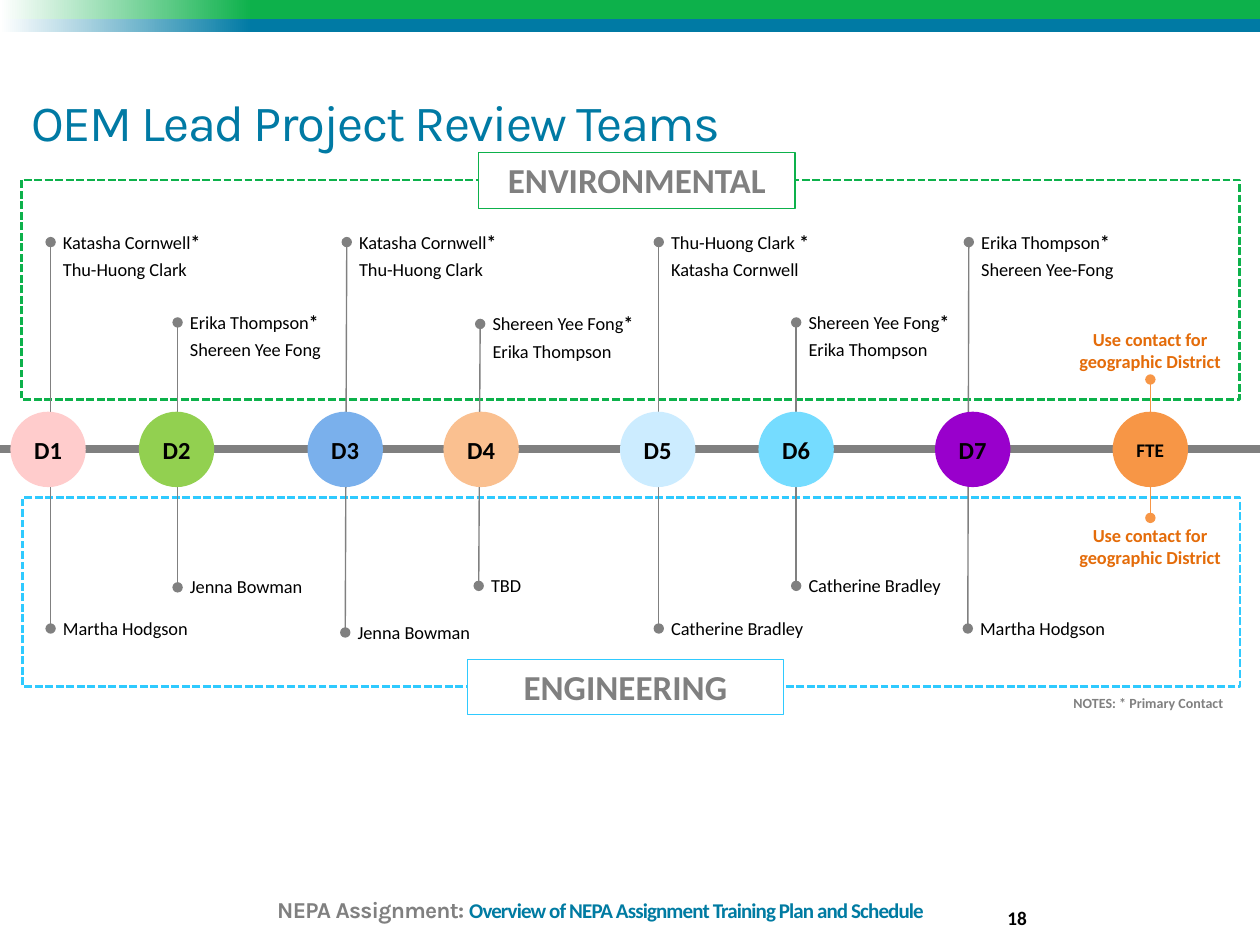
import pptx
import pptx.util
import pptx.dml.color
import pptx.enum.dml
import pptx.enum.shapes
import pptx.enum.text
import pptx.oxml.xmlchemy

Cm = pptx.util.Cm
Pt = pptx.util.Pt
SHAPE = pptx.enum.shapes.MSO_SHAPE
ALIGN = pptx.enum.text.PP_ALIGN
ANCHOR = pptx.enum.text.MSO_ANCHOR

COLORS = {
    "white": "FFFFFF", "black": "000000", "gray": "808080",
    "green": "0DB14B", "blue": "007AA4", "footer": "007BA2", "sky": "2FCAFF",
    "orange": "F79646", "contact": "E46C0A",
    "D1": "FFCCCC", "D2": "92D050", "D3": "7AB0EC", "D4": "FAC090",
    "D5": "CCECFF", "D6": "75DCFF", "D7": "9900CC", "FTE": "F79646",
}

DISTRICTS = [
    ("D1", 0.97, 1.02, 4.88, 1.02, 12.67, "Katasha Cornwell", "Thu-Huong Clark", "Martha Hodgson"),
    ("D2", 3.56, 3.58, 6.5, 3.58, 11.84, "Erika Thompson", "Shereen Yee Fong", "Jenna Bowman"),
    ("D3", 6.96, 6.99, 4.88, 6.96, 12.75, "Katasha Cornwell", "Thu-Huong Clark", "Jenna Bowman"),
    ("D4", 9.7, 9.68, 6.53, 9.65, 11.81, "Shereen Yee Fong", "Erika Thompson", "TBD"),
    ("D5", 13.26, 13.28, 4.88, 13.28, 12.67, "Thu-Huong Clark ", "Katasha Cornwell", "Catherine Bradley"),
    ("D6", 16.05, 16.05, 6.5, 16.05, 11.81, "Shereen Yee Fong", "Erika Thompson", "Catherine Bradley"),
    ("D7", 19.61, 19.53, 4.88, 19.51, 12.67, "Erika Thompson", "Shereen Yee-Fong", "Martha Hodgson"),
]


def rgb(name):
    """Return the named colour."""
    return pptx.dml.color.RGBColor.from_string(COLORS[name])


def add_text(p, text, size=10.5, color="black", bold=False, font="Calibri",
             align=None, after=0, line=None, track=0):
    """Append a formatted run to a paragraph."""
    p.alignment = align
    p.space_after = Pt(after)
    p.line_spacing = line
    r = p.add_run()
    r.text = text
    r.font.name, r.font.size, r.font.bold = font, Pt(size), bold
    r.font.color.rgb = rgb(color)
    if track:
        r._r.get_or_add_rPr().set("spc", str(round(track * 100)))


def add_box(s, x, y, w, h, anchor=ANCHOR.TOP, inset=True):
    """Add a wrapping text box and return its text frame."""
    tf = s.shapes.add_textbox(Cm(x), Cm(y), Cm(w), Cm(h)).text_frame
    tf.word_wrap = True
    tf.vertical_anchor = anchor
    if not inset:
        tf.margin_left = tf.margin_right = tf.margin_top = tf.margin_bottom = 0
    return tf


def add_shape(s, kind, x, y, w, h, fill=None, line=None, width=0.75):
    """Add a flat shape with optional fill and outline."""
    sp = s.shapes.add_shape(kind, Cm(x), Cm(y), Cm(w), Cm(h))
    sp.shadow.inherit = False
    if fill:
        sp.fill.solid()
        sp.fill.fore_color.rgb = rgb(fill)
    else:
        sp.fill.background()
    if line:
        sp.line.color.rgb = rgb(line)
        sp.line.width = Pt(width)
    else:
        sp.line.fill.background()
    return sp


def add_line(s, x1, y1, x2, y2, color="gray", width=0.79, dots=True):
    """Add a straight line, with round ends if dots is set."""
    c = s.shapes.add_connector(pptx.enum.shapes.MSO_CONNECTOR.STRAIGHT,
                               Cm(x1), Cm(y1), Cm(x2), Cm(y2))
    c.line.color.rgb = rgb(color)
    c.line.width = Pt(width)
    if dots:
        ln = c.line._get_or_add_ln()
        for tag in ("a:headEnd", "a:tailEnd"):
            end = pptx.oxml.xmlchemy.OxmlElement(tag)
            end.set("type", "oval")
            ln.append(end)
    c._element.spPr.append(pptx.oxml.xmlchemy.OxmlElement("a:effectLst"))


def add_banner(s, x, y, w):
    """Draw the two fading stripes."""
    for color, top, h in (("green", 0, 0.39), ("blue", 0.39, 0.25)):
        sp = add_shape(s, SHAPE.RECTANGLE, x, y + top, w, h)
        sp.fill.gradient()
        sp.fill.gradient_angle = 0
        for stop, name, position in zip(sp.fill.gradient_stops, ("white", color), (0, 0.2)):
            stop.color.rgb = rgb(name)
            stop.position = position


def add_section(s, x, y, w, h, title, color, tag_x, edge):
    """Draw a dashed frame with a title tag centred on one edge."""
    frame = add_shape(s, SHAPE.RECTANGLE, x, y, w, h, line=color, width=1.5)
    frame.line.dash_style = pptx.enum.dml.MSO_LINE.SQUARE_DOT
    tag = add_shape(s, SHAPE.RECTANGLE, x + tag_x, y + edge - 0.55, 6.38, 1.12, "white", color)
    tag.text_frame.vertical_anchor = ANCHOR.TOP
    add_text(tag.text_frame.paragraphs[0], title, size=20, color="gray", bold=True, align=ALIGN.CENTER)


def add_circle(s, cx, cy, name, size=14):
    """Draw a named circle on the timeline."""
    d = 1.52
    sp = add_shape(s, SHAPE.OVAL, cx - d / 2, cy - d / 2, d, d, name)
    tf = sp.text_frame
    tf.word_wrap = False
    tf.vertical_anchor = ANCHOR.MIDDLE
    add_text(tf.paragraphs[0], name, size=size, bold=True, align=ALIGN.CENTER)


def add_district(s, cy, name, cx, x1, y1, x2, y2, primary, second, engineer):
    """Draw a district with its reviewers above and engineer below."""
    add_line(s, x2, y2, x1, y1)
    add_circle(s, cx, cy, name)
    tf = add_box(s, x1, y1 - 0.37, 3.81, 1.27)
    p = tf.paragraphs[0]
    add_text(p, primary, after=3)
    add_text(p, "*", size=11, bold=True, after=3)
    add_text(tf.add_paragraph(), second, after=3)
    tf = add_box(s, x2, y2 - 0.36, 3.81, 0.71)
    add_text(tf.paragraphs[0], engineer, after=3)


def add_fte(s, cx, cy, y1, y2):
    """Draw the FTE marker with its contact hints."""
    add_line(s, cx, y2, cx, y1, "orange")
    add_circle(s, cx, cy, "FTE", 11)
    for top in (y1 - 1.15, y2):
        tf = add_box(s, cx - 1.91, top, 3.81, 1.14)
        add_text(tf.paragraphs[0], "Use contact for geographic District",
                 color="contact", bold=True, align=ALIGN.CENTER, after=3)


def add_footer(s, x, y):
    """Write the footer and the page number."""
    p = add_box(s, x, y, 14.07, 1.19, ANCHOR.BOTTOM, False).paragraphs[0]
    style = {"bold": True, "line": 0.8, "after": 12}
    add_text(p, "NEPA Assignment: ", size=13, color="gray", font="Karla", track=-0.4, **style)
    add_text(p, "Overview of NEPA Assignment Training Plan and Schedule",
             size=12, color="footer", track=-0.5, **style)
    p = add_box(s, x + 13.89, y + 0.43, 1.47, 1.02, ANCHOR.BOTTOM).paragraphs[0]
    add_text(p, "18", size=11, bold=True, align=ALIGN.RIGHT)


def main():
    """Build and save the slide."""
    prs = pptx.Presentation()
    prs.slide_width, prs.slide_height = Cm(25.4), Cm(19.05)
    s = prs.slides.add_slide(prs.slide_layouts[6])
    axis = 9.06
    add_banner(s, 0, 0, 25.4)
    p = add_box(s, 0.64, 0.76, 22.86, 2.29, ANCHOR.BOTTOM, False).paragraphs[0]
    add_text(p, "OEM Lead Project Review Teams", size=29, color="blue", font="Karla", line=0.8, track=-0.9)
    add_section(s, 0.43, 3.63, 24.56, 4.42, "ENVIRONMENTAL", "green", 9.22, 0)
    add_section(s, 0.46, 10.03, 24.54, 3.81, "ENGINEERING", "sky", 8.96, 3.81)
    add_line(s, 0, axis, 25.4, axis, width=4.5, dots=False)
    for district in DISTRICTS:
        add_district(s, axis, *district)
    add_fte(s, 23.19, axis, 7.65, 10.44)
    p = add_box(s, 21.39, 13.87, 3.61, 0.61).paragraphs[0]
    add_text(p, "NOTES: * Primary Contact", size=8, color="gray", bold=True)
    add_footer(s, 5.59, 17.42)
    prs.save("out.pptx")


if __name__ == "__main__":
    main()
